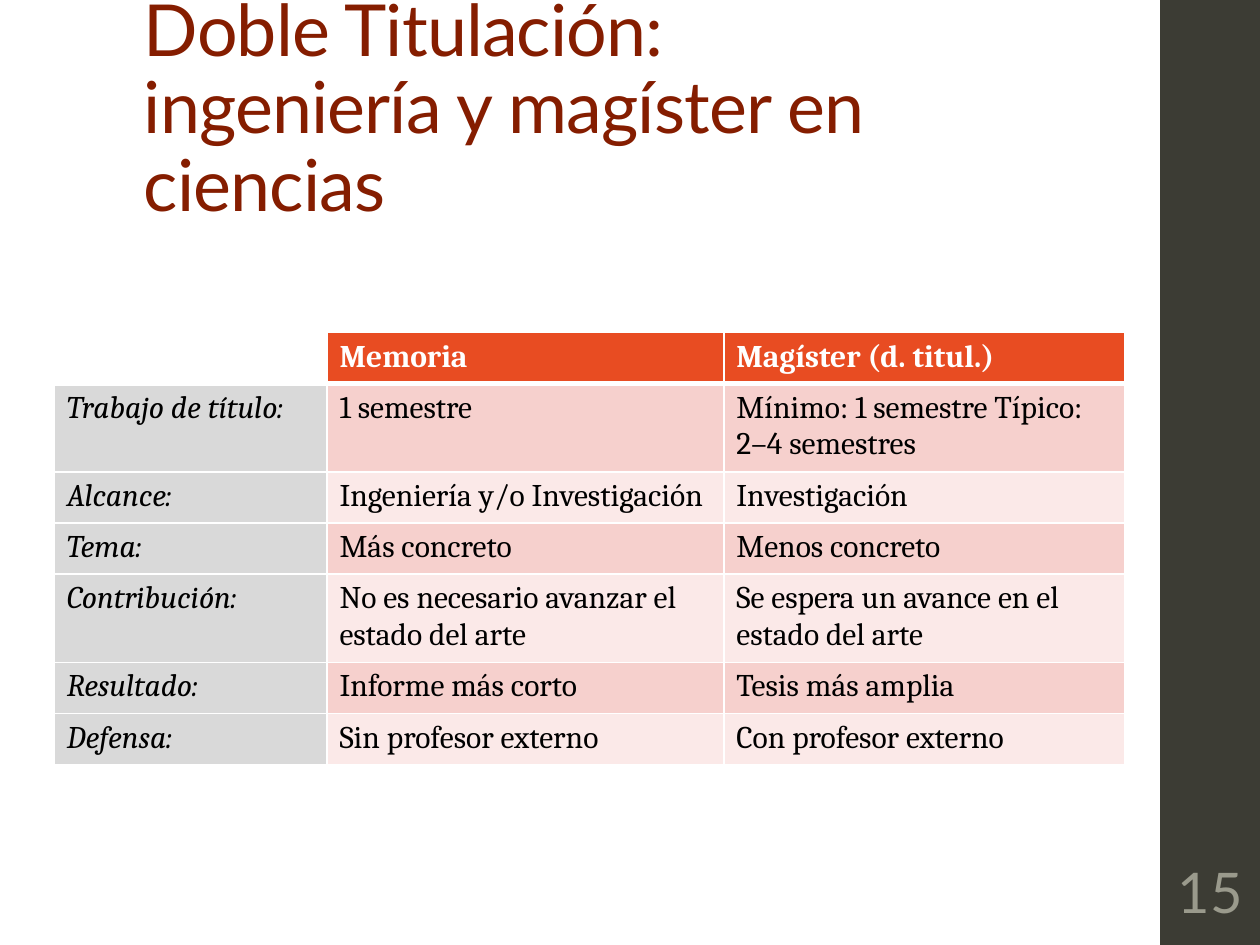
from lxml import etree
from pptx import Presentation
from pptx.dml.color import RGBColor
from pptx.enum import shapes, text
from pptx.oxml.ns import qn
from pptx.util import Pt

WHITE = RGBColor(0xFF, 0xFF, 0xFF)
BLACK = RGBColor(0, 0, 0)
OLIVE = RGBColor(0x3C, 0x3C, 0x34)
SAGE = RGBColor(0x9A, 0x9A, 0x8C)
MAROON = RGBColor(0x85, 0x1D, 0x00)
ORANGE = RGBColor(0xE8, 0x4C, 0x22)
GRAY = RGBColor(0xD9, 0xD9, 0xD9)
PINK = RGBColor(0xF6, 0xD0, 0xCD)
PALE_PINK = RGBColor(0xFB, 0xE9, 0xE8)

COMPARISON = [
    ("", "Memoria", "Magíster (d. titul.)"),
    ("Trabajo de título:", "1 semestre", "Mínimo: 1 semestre Típico: 2–4 semestres"),
    ("Alcance:", "Ingeniería y/o Investigación", "Investigación"),
    ("Tema:", "Más concreto", "Menos concreto"),
    ("Contribución:", "No es necesario avanzar el estado del arte",
     "Se espera un avance en el estado del arte"),
    ("Resultado:", "Informe más corto", "Tesis más amplia"),
    ("Defensa:", "Sin profesor externo", "Con profesor externo"),
]


class SlideBuilder:
    heading_font = "Lato"
    table_font = "Cambria"
    table_size = 18

    def __init__(self, slide):
        self.slide = slide

    def run(self, paragraph, words, font, size, color, bold=False, italic=False):
        run = paragraph.add_run()
        run.text = words
        run.font.name = font
        run.font.size = Pt(size)
        run.font.color.rgb = color
        run.font.bold = bold
        run.font.italic = italic
        return run

    def title(self, lines, left, top, width, height):
        title = self.slide.shapes.title
        title.left, title.top = Pt(left), Pt(top)
        title.width, title.height = Pt(width), Pt(height)
        frame = title.text_frame
        frame.word_wrap = True
        frame.auto_size = text.MSO_AUTO_SIZE.NONE
        frame.vertical_anchor = text.MSO_ANCHOR.BOTTOM
        paragraph = frame.paragraphs[0]
        paragraph.alignment = text.PP_ALIGN.LEFT
        paragraph.line_spacing = 0.9
        paragraph.space_before = Pt(0)
        for i, line in enumerate(lines):
            if i:
                paragraph.add_line_break()
            run = self.run(paragraph, line, self.heading_font, 41, MAROON)
            run.font._element.set("spc", "-50")

    def side_bar(self, left, top, width, height):
        bar = self.slide.shapes.add_shape(
            shapes.MSO_SHAPE.RECTANGLE, Pt(left), Pt(top), Pt(width), Pt(height))
        bar.shadow.inherit = False
        bar.fill.solid()
        bar.fill.fore_color.rgb = OLIVE
        bar.line.fill.background()

    def page_number(self, number, left, top, width, height):
        box = self.slide.shapes.add_textbox(Pt(left), Pt(top), Pt(width), Pt(height))
        frame = box.text_frame
        frame.word_wrap = True
        frame.vertical_anchor = text.MSO_ANCHOR.MIDDLE
        frame.margin_left = frame.margin_right = Pt(2)
        paragraph = frame.paragraphs[0]
        paragraph.alignment = text.PP_ALIGN.CENTER
        self.run(paragraph, number, self.heading_font, 32, SAGE)

    def borders(self, cell, top, bottom):
        """White borders, 1 pt at the sides; top and bottom widths in points."""
        properties = cell._tc.get_or_add_tcPr()
        for side, width in (("L", 1), ("R", 1), ("T", top), ("B", bottom)):
            line = etree.SubElement(properties, qn(f"a:ln{side}"), w=str(Pt(width)))
            fill = etree.SubElement(line, qn("a:solidFill"))
            etree.SubElement(fill, qn("a:srgbClr"), val=str(WHITE))

    def cell_fill(self, row, column):
        if row == 0:
            return ORANGE if column else WHITE
        if column == 0:
            return GRAY
        return PINK if row % 2 else PALE_PINK

    def table(self, rows, left, top, column_widths, row_height):
        table = self.slide.shapes.add_table(
            len(rows), len(column_widths), Pt(left), Pt(top),
            Pt(sum(column_widths)), Pt(row_height * len(rows))).table
        for column, width in zip(table.columns, column_widths):
            column.width = Pt(width)
        for r, entries in enumerate(rows):
            table.rows[r].height = Pt(row_height)
            for c, words in enumerate(entries):
                cell = table.cell(r, c)
                self.borders(cell, top=3 if r == 1 else 1, bottom=3 if r == 0 else 1)
                cell.fill.solid()
                cell.fill.fore_color.rgb = self.cell_fill(r, c)
                if words:
                    self.run(cell.text_frame.paragraphs[0], words, self.table_font,
                             self.table_size, BLACK if r else WHITE,
                             bold=r == 0, italic=c == 0)


def main():
    deck = Presentation()
    deck.slide_width, deck.slide_height = Pt(720), Pt(540)
    title_only = deck.slide_layouts[5]
    builder = SlideBuilder(deck.slides.add_slide(title_only))
    builder.side_bar(663, 0, 57, 540)
    builder.title(["Doble Titulación: ", "ingeniería y magíster en ciencias"],
                  75, 28.8, 572.4, 104.4)
    builder.page_number("15", 664.5, 486, 54, 46.8)
    builder.table(COMPARISON, 31, 190, [155.8, 226.8, 229.4], 29.2)
    deck.save("out.pptx")


if __name__ == "__main__":
    main()
